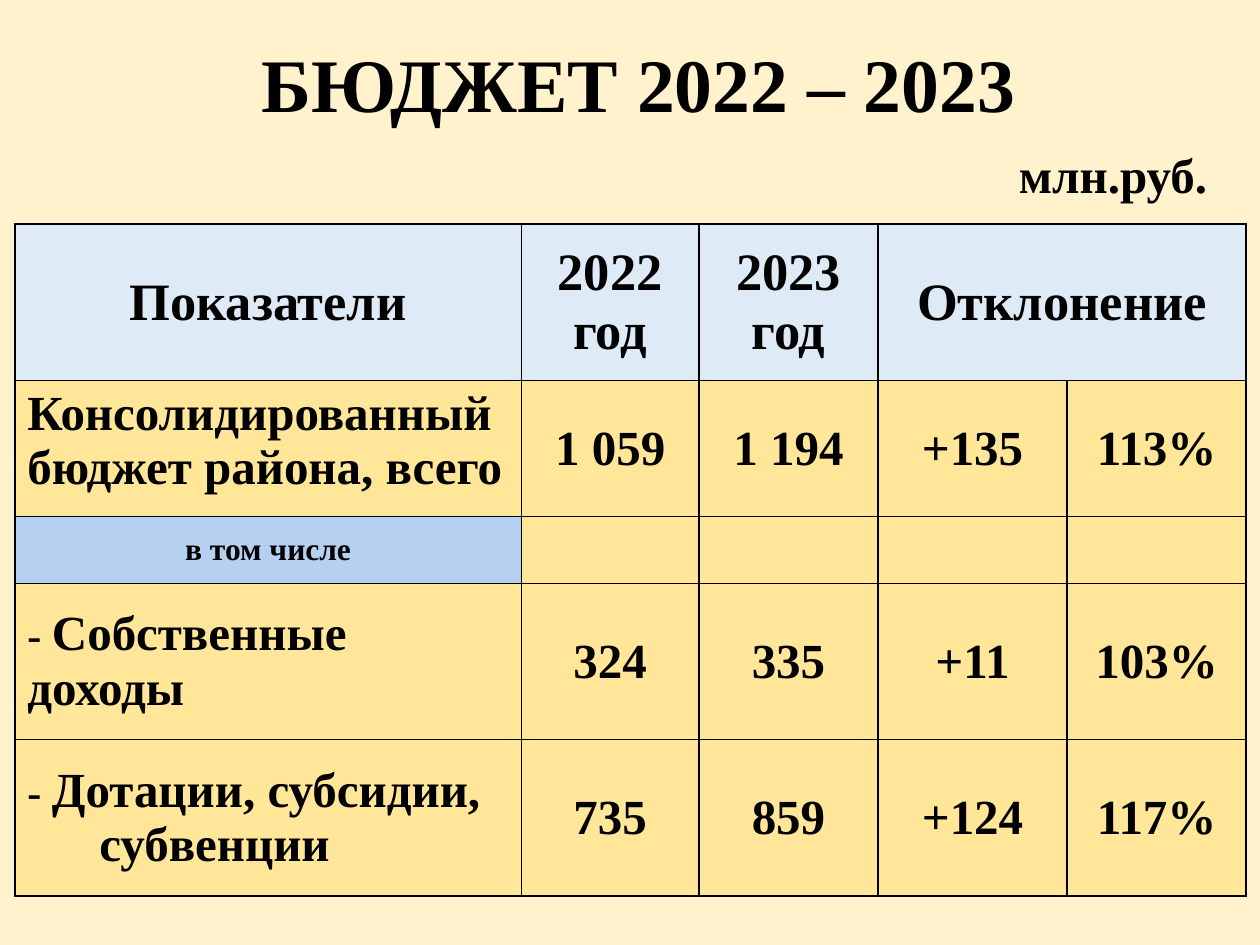
from lxml.etree import SubElement
from pptx import Presentation
from pptx.dml.color import RGBColor as RGB
from pptx.enum.text import MSO_ANCHOR as Anchor, PP_ALIGN as Align
from pptx.oxml.ns import qn
from pptx.util import Cm, Pt

COLORS = {"page": "FFF2CC", "head": "DEEBF7", "body": "FFE699",
          "note": "B5D0F1", "ink": "000000"}
FONT = "Times New Roman"
COLS = [10.21, 3.58, 3.61, 3.81, 3.61]
ROWS = [3.15, 2.74, 1.35, 3.15, 3.15]
HEADER = ["Показатели", "2022 год", "2023 год", "Отклонение"]
BUDGET = [
    ([[("Консолидированный бюджет района, всего", 28)]],
     ["1 059", "1 194", "+135", "113%"]),
    ([[("в том числе", 18)]], []),
    ([[("- ", 24), ("Собственные доходы", 28)]],
     ["324", "335", "+11", "103%"]),
    ([[("- ", 24), ("Дотации, субсидии,", 28)], [("субвенции", 28)]],
     ["735", "859", "+124", "117%"]),
]


def add_run(p, text, size):
    """Add one bold run in the slide's font."""
    r = p.add_run()
    r.text = text
    r.font.name, r.font.size, r.font.bold = FONT, Pt(size), True
    r.font.color.rgb = RGB.from_string(COLORS["ink"])


def add_text(s, box, text, size, align, anchor=Anchor.TOP, wrap=True):
    """Place one line of text in a box and return its paragraph."""
    tf = s.shapes.add_textbox(*map(Cm, box)).text_frame
    tf.word_wrap, tf.vertical_anchor = wrap, anchor
    p = tf.paragraphs[0]
    p.alignment = align
    add_run(p, text, size)
    return p


def style_cell(cell, color):
    """Give a cell its black borders, fill and middle anchor."""
    tc_pr = cell._tc.get_or_add_tcPr()
    for side in ("a:lnL", "a:lnR", "a:lnT", "a:lnB"):
        ln = SubElement(tc_pr, qn(side), w=str(Pt(1)))
        fill = SubElement(ln, qn("a:solidFill"))
        SubElement(fill, qn("a:srgbClr"), val=COLORS["ink"])
    cell.fill.solid()
    cell.fill.fore_color.rgb = RGB.from_string(COLORS[color])
    cell.vertical_anchor = Anchor.MIDDLE


def fill_cell(cell, paragraphs, align=Align.CENTER):
    """Write paragraphs of (text, size) runs into a cell."""
    tf = cell.text_frame
    for i, runs in enumerate(paragraphs):
        p = tf.add_paragraph() if i else tf.paragraphs[0]
        p.alignment = align
        if i:
            p._p.get_or_add_pPr().set("marL", str(Cm(1.45)))
        for text, size in runs:
            add_run(p, text, size)


def add_budget_table(s, left, top):
    """Build the budget table from its top left corner."""
    table = s.shapes.add_table(len(ROWS), len(COLS), Cm(left), Cm(top),
                               Cm(sum(COLS)), Cm(sum(ROWS))).table
    table.first_row = table.horz_banding = False
    for col, width in zip(table.columns, COLS):
        col.width = Cm(width)
    for i, height in enumerate(ROWS):
        table.rows[i].height = Cm(height)
        for cell in table.rows[i].cells:
            style_cell(cell, "body" if i else "head")
    table.cell(0, 3).merge(table.cell(0, 4))
    for j, text in enumerate(HEADER):
        fill_cell(table.cell(0, j), [[(text, 30)]])
    for i, (label, values) in enumerate(BUDGET, 1):
        fill_cell(table.cell(i, 0), label, Align.LEFT if values else Align.CENTER)
        for j, value in enumerate(values, 1):
            fill_cell(table.cell(i, j), [[(value, 28)]])
    table.cell(1, 0).vertical_anchor = Anchor.TOP
    note = table.cell(2, 0)
    note.fill.fore_color.rgb = RGB.from_string(COLORS["note"])


def main():
    """Build and save the budget slide."""
    prs = Presentation()
    prs.slide_width, prs.slide_height = Cm(25.4), Cm(19.05)
    s = prs.slides.add_slide(prs.slide_layouts[6])
    s.background.fill.solid()
    s.background.fill.fore_color.rgb = RGB.from_string(COLORS["page"])
    title = add_text(s, (4.67, 0.66, 16.05, 2.21), "БЮДЖЕТ 2022 – 2023",
                     43.2, Align.RIGHT, Anchor.MIDDLE)
    title.line_spacing = 0.9
    add_budget_table(s, 0.3, 4.52)
    add_text(s, (20.29, 2.79, 4.34, 1.45), "млн.руб.", 28, Align.LEFT, wrap=False)
    prs.save("out.pptx")


if __name__ == "__main__":
    main()
